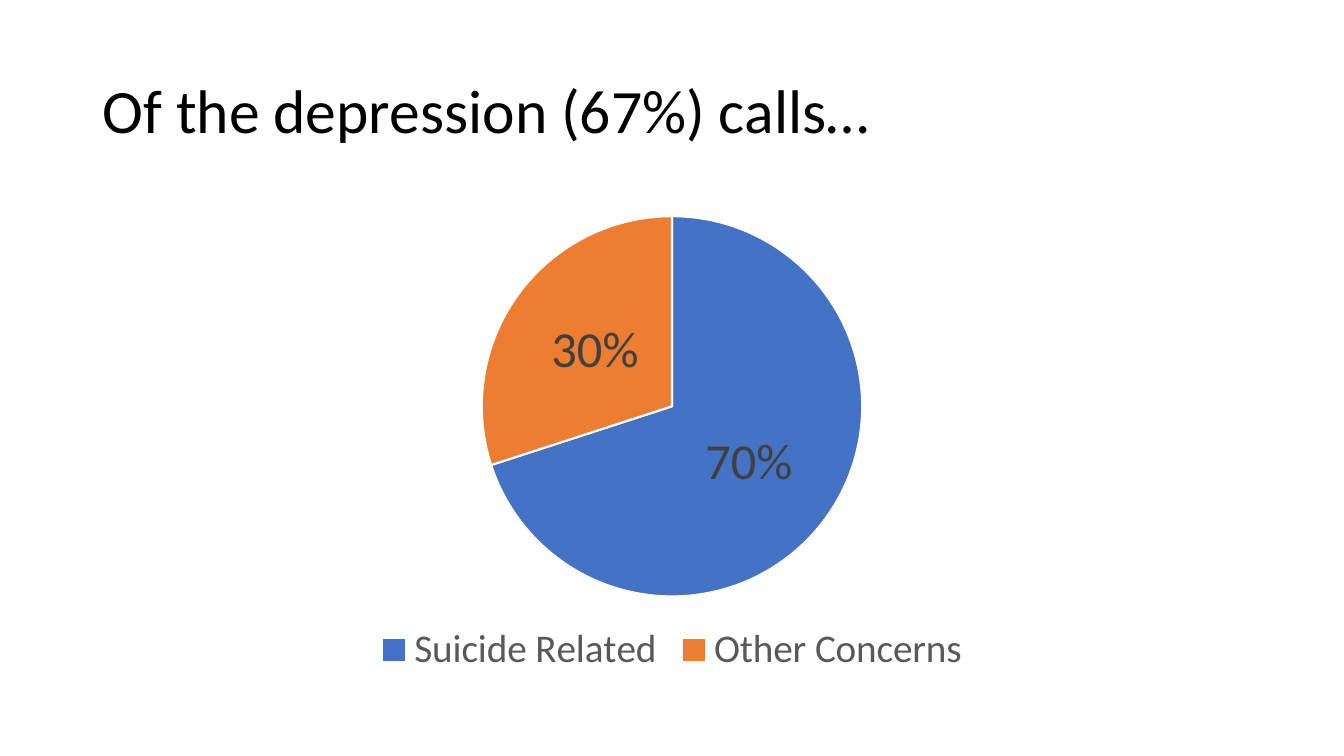
from dataclasses import dataclass

from pptx import Presentation
from pptx import util as u
from pptx.chart import data as chart_data
from pptx.dml import color
from pptx.enum import chart as charts, text

FONT = "Calibri"
COLORS = {
    "white": "FFFFFF",
    "title": "000000",
    "label": "404040",
    "legend": "595959",
    "suicide": "4472C4",
    "other": "ED7D31",
}
WIDTH, HEIGHT = u.Inches(13.33), u.Inches(7.5)


@dataclass(frozen=True)
class Area:
    left: float
    top: float
    width: float
    height: float

    def lengths(self) -> tuple[int, int, int, int]:
        return (int(self.left * WIDTH), int(self.top * HEIGHT),
                int(self.width * WIDTH), int(self.height * HEIGHT))


@dataclass(frozen=True)
class Concern:
    name: str
    calls: int
    color: str


MARGIN = 0.92 / 13.33
TITLE = Area(MARGIN, 0.4 / 7.5, 1 - 2 * MARGIN, 1.45 / 7.5)
PIE = Area(MARGIN, 2 / 7.5, 1 - 2 * MARGIN, 4.76 / 7.5)
CONCERNS = [
    Concern("Suicide Related", 70, "suicide"),
    Concern("Other Concerns", 30, "other"),
]


def rgb(name: str) -> color.RGBColor:
    return color.RGBColor.from_string(COLORS[name])


def style_font(font, size: float, name: str) -> None:
    font.name = FONT
    font.size = u.Pt(size)
    font.color.rgb = rgb(name)


def add_title(page, area: Area, wording: str) -> None:
    box = page.shapes.add_textbox(*area.lengths())
    frame = box.text_frame
    frame.word_wrap = True
    frame.vertical_anchor = text.MSO_ANCHOR.MIDDLE
    para = frame.paragraphs[0]
    para.text = wording
    para.line_spacing = 0.9
    style_font(para.font, 44, "title")


def add_pie(page, area: Area, concerns: list[Concern]) -> None:
    data = chart_data.CategoryChartData()
    data.categories = [concern.name for concern in concerns]
    data.add_series("Series 1", [concern.calls for concern in concerns])
    chart = page.shapes.add_chart(
        charts.XL_CHART_TYPE.PIE, *area.lengths(), data).chart
    style_font(chart.font, 10, "title")
    chart.has_title = False

    chart.has_legend = True
    chart.legend.position = charts.XL_LEGEND_POSITION.BOTTOM
    chart.legend.include_in_layout = False
    style_font(chart.legend.font, 28, "legend")

    plot = chart.plots[0]
    plot.vary_by_categories = True
    series = plot.series[0]
    for index, concern in enumerate(concerns):
        slice_format = series.points[index].format
        slice_format.fill.solid()
        slice_format.fill.fore_color.rgb = rgb(concern.color)
        slice_format.line.color.rgb = rgb("white")
        slice_format.line.width = u.Pt(1.5)

    labels = series.data_labels
    labels.show_value = False
    labels.show_percentage = True
    labels.number_format = "0%"
    labels.number_format_is_linked = False
    labels.position = charts.XL_LABEL_POSITION.CENTER
    style_font(labels.font, 36, "label")


def main() -> None:
    deck = Presentation()
    deck.slide_width, deck.slide_height = WIDTH, HEIGHT
    page = deck.slides.add_slide(deck.slide_layouts[6])
    page.background.fill.solid()
    page.background.fill.fore_color.rgb = rgb("white")
    add_title(page, TITLE, "Of the depression (67%) calls…")
    add_pie(page, PIE, CONCERNS)
    deck.save("out.pptx")


if __name__ == "__main__":
    main()
